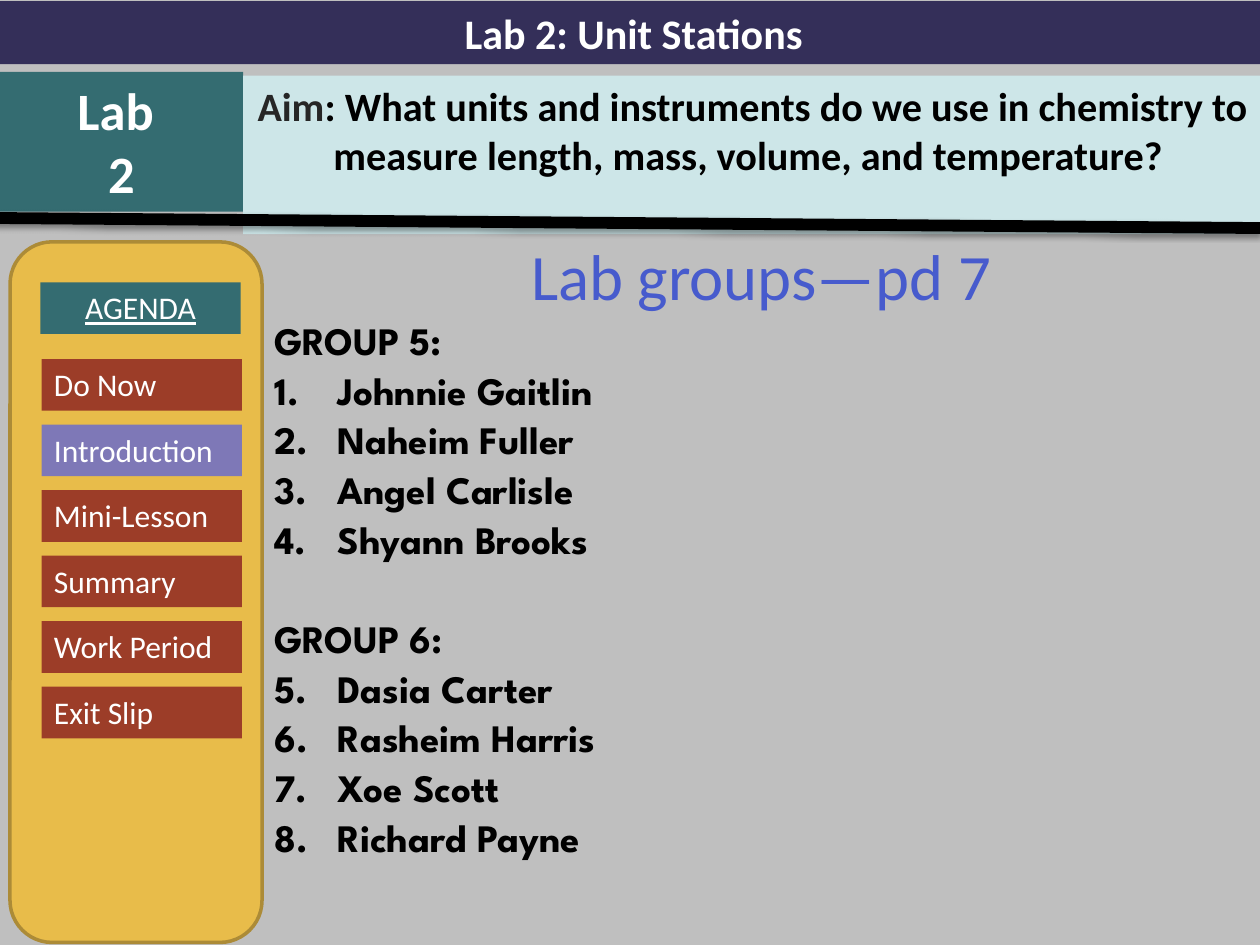
from lxml import etree
from pptx import Presentation
from pptx import util as u
from pptx.dml.color import RGBColor
from pptx.enum import shapes, text
from pptx.oxml.ns import qn

TEAL, RUST, VIOLET, WHITE, BLACK = "346C71", "9C3D28", "7E78B7", "FFFFFF", "000000"


def colour(value):
    return RGBColor.from_string(value)


class LabSlide:
    body_font = "Calibri"
    list_font = "League Spartan"

    def __init__(self, deck, background):
        self.slide = deck.slides.add_slide(deck.slide_layouts[6])
        fill = self.slide.background.fill
        fill.solid()
        fill.fore_color.rgb = colour(background)

    def style(self, span, size, ink, bold=False, font=None):
        span.font.name = font or self.body_font
        span.font.size = u.Pt(size)
        span.font.bold = bold
        span.font.color.rgb = colour(ink)

    def box(self, place, fill, kind=shapes.MSO_SHAPE.RECTANGLE):
        box = self.slide.shapes.add_shape(kind, *map(u.Inches, place))
        box.shadow.inherit = False
        box.fill.solid()
        box.fill.fore_color.rgb = colour(fill)
        box.line.fill.background()
        return box

    def label(self, place, fill, wording, size, bold=False, centred=True):
        box = self.box(place, fill)
        frame = box.text_frame
        frame.word_wrap = True
        frame.vertical_anchor = text.MSO_ANCHOR.TOP
        frame.text = wording
        for para in frame.paragraphs:
            para.alignment = text.PP_ALIGN.CENTER if centred else text.PP_ALIGN.LEFT
            for span in para.runs:
                self.style(span, size, WHITE, bold)
        return box

    def aim(self, place, fill, lead, question):
        box = self.label(place, fill, lead, 23, True)
        para = box.text_frame.paragraphs[0]
        para.runs[0].font.color.rgb = colour("262626")
        span = para.add_run()
        span.text = question
        self.style(span, 23, BLACK, True)

    def panel(self, place, fill, edge):
        panel = self.box(place, fill, shapes.MSO_SHAPE.ROUNDED_RECTANGLE)
        panel.line.color.rgb = colour(edge)
        panel.line.width = u.Pt(2)
        return panel

    def divider(self, start, end, width):
        line = self.slide.shapes.add_connector(
            shapes.MSO_CONNECTOR.STRAIGHT, *map(u.Inches, start + end))
        line.line.color.rgb = colour(BLACK)
        line.line.width = u.Pt(width)
        effects = etree.SubElement(line._element.spPr, qn("a:effectLst"))
        shadow = etree.SubElement(effects, qn("a:outerShdw"), blurRad=str(u.Pt(3.1)),
                                  dist=str(u.Pt(1.6)), dir="5400000", rotWithShape="0")
        ink = etree.SubElement(shadow, qn("a:srgbClr"), val=BLACK)
        etree.SubElement(ink, qn("a:alpha"), val="38000")

    def number(self, para, start):
        props = para._p.get_or_add_pPr()
        props.set("marL", str(u.Inches(0.5)))
        props.set("indent", str(u.Inches(-0.5)))
        etree.SubElement(props, qn("a:buFont"), typeface="+mj-lt")
        etree.SubElement(props, qn("a:buAutoNum"), type="arabicPeriod", startAt=str(start))

    def line_of_text(self, para, wording, size, ink, bold, font, before):
        para.text = wording
        para.line_spacing = 0.9
        para.space_before = u.Pt(before)
        self.style(para.runs[0], size, ink, bold, font)

    def groups(self, place, heading, groups):
        box = self.slide.shapes.add_textbox(*map(u.Inches, place))
        frame = box.text_frame
        frame.word_wrap = True
        title = frame.paragraphs[0]
        self.line_of_text(title, heading, 37, "475BCD", False, self.body_font, 7.4)
        title.alignment = text.PP_ALIGN.CENTER
        start = 1
        for name, members in groups.items():
            before = 4.4 if start == 1 else 32.8
            self.line_of_text(frame.add_paragraph(), name, 22.2, BLACK, True,
                              self.list_font, before)
            for member in members:
                para = frame.add_paragraph()
                self.line_of_text(para, member, 22.2, BLACK, True, self.list_font, 4.4)
                self.number(para, start)
            start += len(members)


def main():
    deck = Presentation()
    deck.slide_width, deck.slide_height = u.Inches(10), u.Inches(7.5)
    page = LabSlide(deck, "BFBFBF")

    page.groups((2.08, 1.89, 7.92, 5.46), "Lab groups—pd 7", {
        "GROUP 5:": ["Johnnie Gaitlin", "Naheim Fuller", "Angel Carlisle", "Shyann Brooks"],
        "GROUP 6:": ["Dasia Carter", "Rasheim Harris", "Xoe Scott", "Richard Payne"],
    })
    page.label((0, 0.01, 10.06, 0.5), "342F59", "Lab 2: Unit Stations", 24, True)
    page.label((0, 0.57, 1.93, 1.11), TEAL, "Lab \n2", 30, True)
    page.aim((1.93, 0.6, 8.1, 1.26), "CDE6E8", "Aim",
             ": What units and instruments do we use in chemistry to measure length, "
             "mass, volume, and temperature? ")
    page.divider((-0.05, 1.73), (10, 1.81), 6.75)

    panel = page.panel((0.08, 1.92, 2, 5.56), "E8BC4A", "AC8B37")
    agenda = page.label((0.32, 2.24, 1.59, 0.41), TEAL, "AGENDA", 18)
    agenda.text_frame.paragraphs[0].runs[0].font.underline = True
    steps = ["Do Now", "Introduction", "Mini-Lesson", "Summary", "Work Period", "Exit Slip"]
    buttons = [
        page.label((0.33, 2.85 + 0.52 * row, 1.59, 0.41),
                   VIOLET if step == "Introduction" else RUST, step, 18, centred=False)
        for row, step in enumerate(steps)
    ]
    page.slide.shapes.add_group_shape([panel, agenda] + buttons)
    deck.save("out.pptx")


if __name__ == "__main__":
    main()
